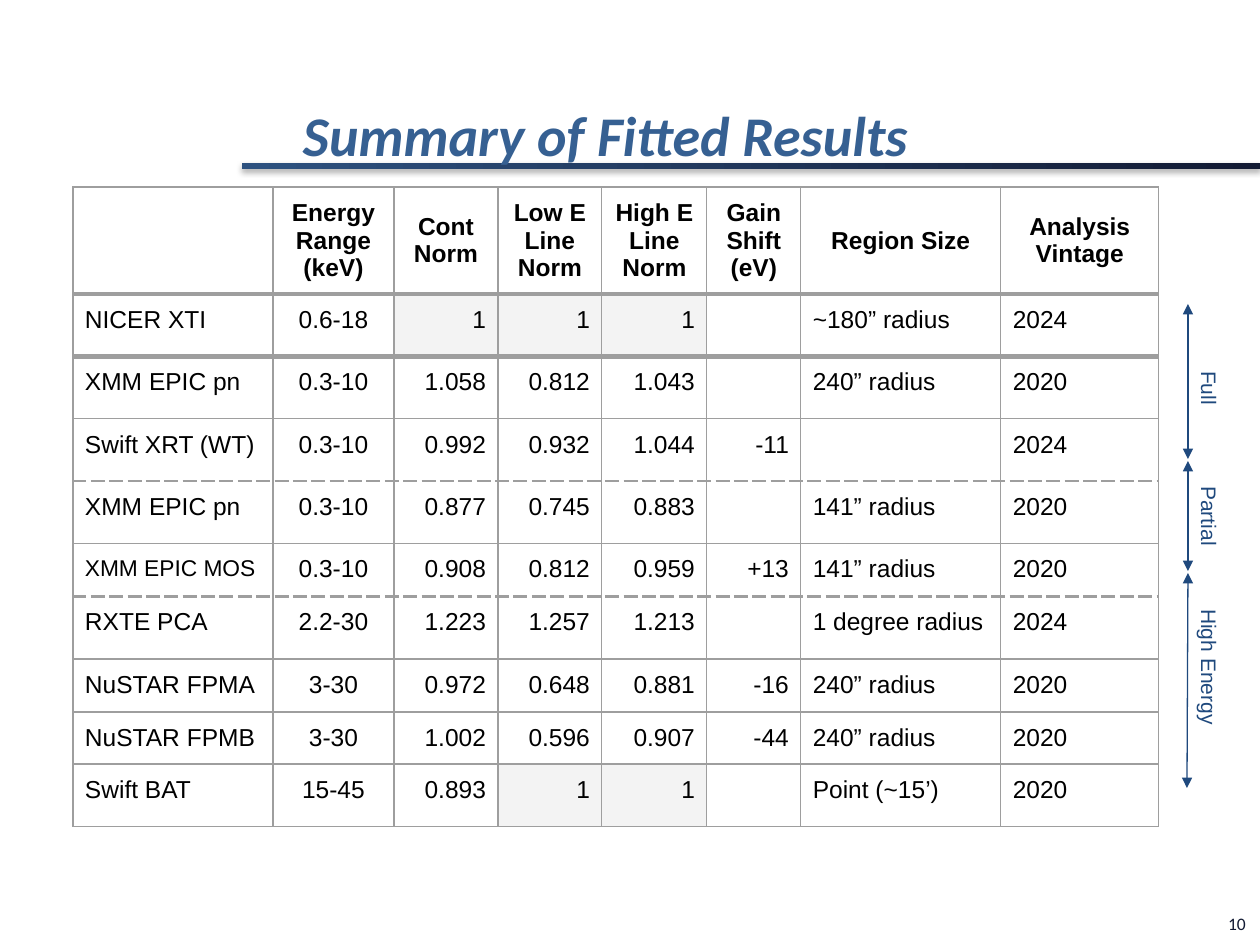
from dataclasses import dataclass

from lxml.etree import SubElement
from pptx import Presentation
from pptx.dml.color import RGBColor
from pptx.enum.shapes import MSO_CONNECTOR, MSO_SHAPE
from pptx.enum.text import MSO_ANCHOR, PP_ALIGN
from pptx.oxml.ns import qn
from pptx.util import Emu, Pt


@dataclass(frozen=True)
class Theme:
    heading_font: str = "Calibri"
    body_font: str = "Arial"
    title: str = "366092"
    rule_start: str = "2D517F"
    navy: str = "121A33"
    black: str = "000000"
    grid: str = "9E9E9E"
    fixed_fill: str = "F3F3F3"
    accent: str = "1F497D"
    title_size: int = 32
    table_size: int = 14
    tight_size: int = 13
    label_size: int = 12
    number_size: int = 10


THEME = Theme()
INSET = 12
COLUMN_WIDTHS = [200, 121, 104, 104, 105, 94, 200, 158]
ROW_HEIGHTS = [107, 60, 61, 61, 60, 53, 60, 53, 52, 61]
LEFT, CENTER, RIGHT = PP_ALIGN.LEFT, PP_ALIGN.CENTER, PP_ALIGN.RIGHT
ALIGNMENTS = [LEFT, CENTER, RIGHT, RIGHT, RIGHT, RIGHT, LEFT, LEFT]
ROWS = [
    ["", "Energy Range\n(keV)", "Cont Norm", "Low E Line Norm", "High E Line Norm",
     "Gain Shift\n(eV)", "Region Size", "Analysis Vintage"],
    ["NICER XTI", "0.6-18", "1", "1", "1", "", "~180” radius", "2024"],
    ["XMM EPIC pn", "0.3-10", "1.058", "0.812", "1.043", "", "240” radius", "2020"],
    ["Swift XRT (WT)", "0.3-10", "0.992", "0.932", "1.044", "-11", "", "2024"],
    ["XMM EPIC pn", "0.3-10", "0.877", "0.745", "0.883", "", "141” radius", "2020"],
    ["XMM EPIC MOS", "0.3-10", "0.908", "0.812", "0.959", "+13", "141” radius", "2020"],
    ["RXTE PCA", "2.2-30", "1.223", "1.257", "1.213", "", "1 degree radius", "2024"],
    ["NuSTAR FPMA", "3-30", "0.972", "0.648", "0.881", "-16", "240” radius", "2020"],
    ["NuSTAR FPMB", "3-30", "1.002", "0.596", "0.907", "-44", "240” radius", "2020"],
    ["Swift BAT", "15-45", "0.893", "1", "1", "", "Point (~15’)", "2020"],
]
# Lines below a row that differ from the thin grid: width in points, dash
THIN = (0.75, "solid")
ROW_LINES = {0: (3, "solid"), 1: (3, "solid"), 3: (1.5, "lgDash"), 5: (1.5, "lgDash")}
# Label, arrow start, arrow end, label centre, label width
GROUPS = [
    ("Full", (1188, 304), (1188, 459), 388, 87),
    ("Partial", (1188, 461), (1188, 571), 516, 87),
    ("High Energy", (1188, 573), (1187, 788), 667, 178),
]


def px(value):
    return Emu(round(value * 914400 / 126))


def rgb(color):
    return RGBColor.from_string(color)


def set_insets(target, horizontal=INSET, vertical=INSET):
    target.margin_left = target.margin_right = px(horizontal)
    target.margin_top = target.margin_bottom = px(vertical)


def write(paragraph, text, size, color, font=THEME.body_font, align=LEFT,
          bold=False, italic=False):
    paragraph.alignment = align
    for index, line in enumerate(text.split("\n")):
        if index:
            paragraph.add_line_break()
        run = paragraph.add_run()
        run.text = line
        run.font.name, run.font.size = font, Pt(size)
        run.font.bold, run.font.italic = bold, italic
        run.font.color.rgb = rgb(color)


def add_title_rule(slide):
    shape = slide.shapes.add_shape(
        MSO_SHAPE.RECTANGLE, px(242), px(163), px(1018), px(6))
    shape.line.fill.background()
    shape.fill.gradient()
    shape.fill.gradient_angle = 0
    for stop, color in zip(shape.fill.gradient_stops, (THEME.rule_start, THEME.navy)):
        stop.color.rgb = rgb(color)
    # Soft shadow below the rule
    effects = SubElement(shape._element.spPr, qn("a:effectLst"))
    shadow = SubElement(effects, qn("a:outerShdw"), blurRad=str(Pt(3.1)),
                        dist=str(Pt(1.8)), dir="5400000", rotWithShape="0")
    color = SubElement(shadow, qn("a:srgbClr"), val=THEME.black)
    SubElement(color, qn("a:alpha"), val="35000")


def place_title(slide, text):
    title = slide.shapes.title
    title.left, title.top, title.width, title.height = px(291), px(82), px(926), px(104)
    frame = title.text_frame
    set_insets(frame)
    frame.vertical_anchor = MSO_ANCHOR.MIDDLE
    write(frame.paragraphs[0], text, THEME.title_size, THEME.title,
          THEME.heading_font, bold=True, italic=True)
    # Bring the title in front of the rule
    title._element.getparent().append(title._element)


def set_borders(cell, top, bottom):
    properties = cell._tc.get_or_add_tcPr()
    edges = (("L", THIN), ("R", THIN), ("T", top), ("B", bottom))
    for index, (side, (width, dash)) in enumerate(edges):
        line = properties.makeelement(qn(f"a:ln{side}"), {"w": str(Pt(width))})
        fill = SubElement(line, qn("a:solidFill"))
        SubElement(fill, qn("a:srgbClr"), val=THEME.grid)
        SubElement(line, qn("a:prstDash"), val=dash)
        properties.insert(index, line)


def fill_cell(cell, text, row, column):
    header = row == 0
    set_insets(cell)
    cell.vertical_anchor = MSO_ANCHOR.MIDDLE if header else MSO_ANCHOR.TOP
    if text == "1":
        cell.fill.solid()
        cell.fill.fore_color.rgb = rgb(THEME.fixed_fill)
    else:
        cell.fill.background()
    if text:
        size = THEME.tight_size if text == "XMM EPIC MOS" else THEME.table_size
        write(cell.text_frame.paragraphs[0], text, size, THEME.black,
              align=CENTER if header else ALIGNMENTS[column], bold=header)
    set_borders(cell, ROW_LINES.get(row - 1, THIN), ROW_LINES.get(row, THIN))


def add_results_table(slide):
    table = slide.shapes.add_table(
        len(ROWS), len(COLUMN_WIDTHS), px(73), px(187),
        px(sum(COLUMN_WIDTHS)), px(sum(ROW_HEIGHTS))).table
    table.first_row = table.horz_banding = False
    for column, width in zip(table.columns, COLUMN_WIDTHS):
        column.width = px(width)
    for row, height in zip(table.rows, ROW_HEIGHTS):
        row.height = px(height)
    for row, values in enumerate(ROWS):
        for column, text in enumerate(values):
            fill_cell(table.cell(row, column), text, row, column)


def add_range_arrow(slide, start, end):
    connector = slide.shapes.add_connector(
        MSO_CONNECTOR.STRAIGHT, *map(px, start + end))
    connector.line.color.rgb = rgb(THEME.accent)
    connector.line.width = Pt(0.75)
    line = connector.line._get_or_add_ln()
    for tag in ("a:headEnd", "a:tailEnd"):
        SubElement(line, qn(tag), type="triangle")
    SubElement(connector._element.spPr, qn("a:effectLst"))


def add_text_box(slide, text, left, top, width, height, size, color, font, align):
    box = slide.shapes.add_textbox(px(left), px(top), px(width), px(height))
    box.text_frame.word_wrap = True
    write(box.text_frame.paragraphs[0], text, size, color, font, align)
    return box


def add_group_label(slide, text, center, width):
    box = add_text_box(slide, text, 1209 - width / 2, center - 25, width, 50,
                       THEME.label_size, THEME.accent, THEME.body_font, CENTER)
    set_insets(box.text_frame)
    box.rotation = 90


def add_page_number(slide, text):
    box = add_text_box(slide, text, 1216, 907, 47, 34, THEME.number_size,
                       THEME.navy, THEME.heading_font, LEFT)
    set_insets(box.text_frame, INSET, 6)


def main():
    presentation = Presentation()
    presentation.slide_width, presentation.slide_height = px(1260), px(945)
    slide = presentation.slides.add_slide(presentation.slide_layouts[5])

    # Page furniture and title
    add_page_number(slide, "10")
    add_title_rule(slide)
    place_title(slide, "Summary of Fitted Results")

    # Results, with the row groups marked at the right
    add_results_table(slide)
    for _, start, end, _, _ in GROUPS:
        add_range_arrow(slide, start, end)
    for text, _, _, center, width in GROUPS:
        add_group_label(slide, text, center, width)

    presentation.save("out.pptx")


if __name__ == "__main__":
    main()
